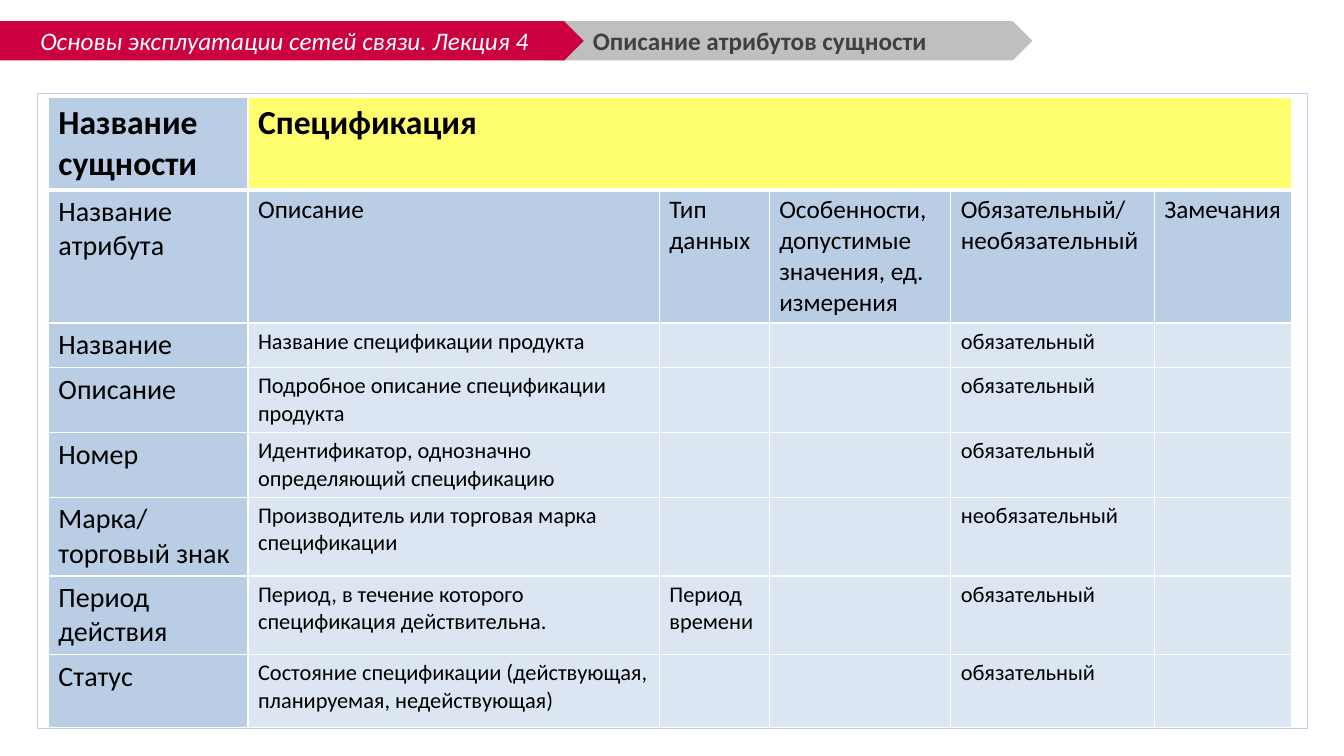
from lxml import etree
from pptx import Presentation
from pptx.dml.color import RGBColor
from pptx.enum import shapes, text
from pptx.oxml import ns
from pptx.util import Inches, Pt

WHITE = RGBColor(0xFF, 0xFF, 0xFF)
BLACK = RGBColor(0x00, 0x00, 0x00)
GREY = RGBColor(0xBF, 0xBF, 0xBF)
DARK_GREY = RGBColor(0x40, 0x40, 0x40)
CRIMSON = RGBColor(0xCC, 0x00, 0x3F)
FRAME_BLUE = RGBColor(0xB8, 0xD0, 0xED)
HEAD_BLUE = RGBColor(0xB9, 0xCD, 0xE5)
PALE_BLUE = RGBColor(0xDC, 0xE6, 0xF2)
YELLOW = RGBColor(0xFF, 0xFE, 0x6E)


def style(paragraph, size, color, bold=False, italic=False):
    for run in paragraph.runs:
        run.font.name = "Calibri"
        run.font.size = Pt(size)
        run.font.color.rgb = color
        run.font.bold = bold
        run.font.italic = italic


def add_border(cell, side, width):
    line = etree.SubElement(cell._tc.get_or_add_tcPr(), ns.qn(f"a:ln{side}"), w=str(Pt(width)))
    solid = etree.SubElement(line, ns.qn("a:solidFill"))
    etree.SubElement(solid, ns.qn("a:srgbClr"), val=str(WHITE))


deck = Presentation()
deck.slide_width = Inches(13.33)
deck.slide_height = Inches(7.5)
slide = deck.slides.add_slide(deck.slide_layouts[5])

topic_band = slide.shapes.add_shape(
    shapes.MSO_SHAPE.PENTAGON, Inches(5.41), Inches(0.21), Inches(4.83), Inches(0.39))
frame = slide.shapes.add_shape(
    shapes.MSO_SHAPE.RECTANGLE, Inches(0.37), Inches(0.92), Inches(12.6), Inches(6.3))
lecture = slide.shapes.add_shape(
    shapes.MSO_SHAPE.PENTAGON, Inches(-0.05), Inches(0.21), Inches(5.84), Inches(0.39))

for band, color in ((topic_band, GREY), (lecture, CRIMSON)):
    band.shadow.inherit = False
    band.fill.solid()
    band.fill.fore_color.rgb = color
    band.line.fill.background()

frame.shadow.inherit = False
frame.fill.background()
frame.line.color.rgb = FRAME_BLUE
frame.line.width = Pt(0.25)

lecture.text_frame.text = "Основы эксплуатации сетей связи. Лекция 4"
lecture.text_frame.vertical_anchor = text.MSO_ANCHOR.MIDDLE
lecture.text_frame.paragraphs[0].alignment = text.PP_ALIGN.CENTER
style(lecture.text_frame.paragraphs[0], 18, WHITE, italic=True)

topic = slide.shapes.title
topic.left, topic.top = Inches(5.78), Inches(0.21)
topic.width, topic.height = Inches(4.14), Inches(0.39)
topic.text_frame.text = "Описание атрибутов сущности"
topic.text_frame.auto_size = text.MSO_AUTO_SIZE.NONE
topic.text_frame.vertical_anchor = text.MSO_ANCHOR.MIDDLE
topic.text_frame.paragraphs[0].alignment = text.PP_ALIGN.LEFT
style(topic.text_frame.paragraphs[0], 18, DARK_GREY, bold=True)
topic.element.getparent().append(topic.element)

REQUIRED = "обязательный"
entries = [
    ("Название сущности", "Спецификация", "", "", "", ""),
    ("Название атрибута", "Описание", "Тип данных",
     "Особенности, допустимые значения, ед. измерения",
     "Обязательный/ необязательный", "Замечания"),
    ("Название", "Название спецификации продукта", "", "", REQUIRED, ""),
    ("Описание", "Подробное описание спецификации продукта", "", "", REQUIRED, ""),
    ("Номер", "Идентификатор, однозначно определяющий спецификацию", "", "", REQUIRED, ""),
    ("Марка/ торговый знак", "Производитель или торговая марка спецификации",
     "", "", "необязательный", ""),
    ("Период действия", "Период, в течение которого спецификация действительна.",
     "Период времени", "", REQUIRED, ""),
    ("Статус", "Состояние спецификации (действующая, планируемая, недействующая)",
     "", "", REQUIRED, ""),
]
widths = [1.98, 4.08, 1.09, 1.8, 2.02, 1.36]
heights = [0.83, 1.2, 0.4, 0.59, 0.59, 0.71, 0.71, 0.72]

attributes = slide.shapes.add_table(
    len(heights), len(widths), Inches(0.48), Inches(0.97), Inches(12.34), Inches(6.15)).table
attributes.first_row = False
attributes.horz_banding = False
for column, width in zip(attributes.columns, widths):
    column.width = Inches(width)
for row, height in zip(attributes.rows, heights):
    row.height = Inches(height)

for r, entry in enumerate(entries):
    for c, wording in enumerate(entry):
        cell = attributes.cell(r, c)
        for side in "LRTB":
            heavy = (r, side) in ((0, "B"), (1, "T"))
            add_border(cell, side, 3 if heavy else 1)
        cell.fill.solid()
        if r == 0 and c > 0:
            cell.fill.fore_color.rgb = YELLOW
        else:
            cell.fill.fore_color.rgb = HEAD_BLUE if r < 2 or c == 0 else PALE_BLUE
        if wording:
            cell.text_frame.text = wording
            size = 24 if r == 0 else 20 if c == 0 else 18 if r == 1 else 16
            style(cell.text_frame.paragraphs[0], size, BLACK, bold=r == 0)

attributes.cell(0, 1).merge(attributes.cell(0, 5))

deck.save("out.pptx")
